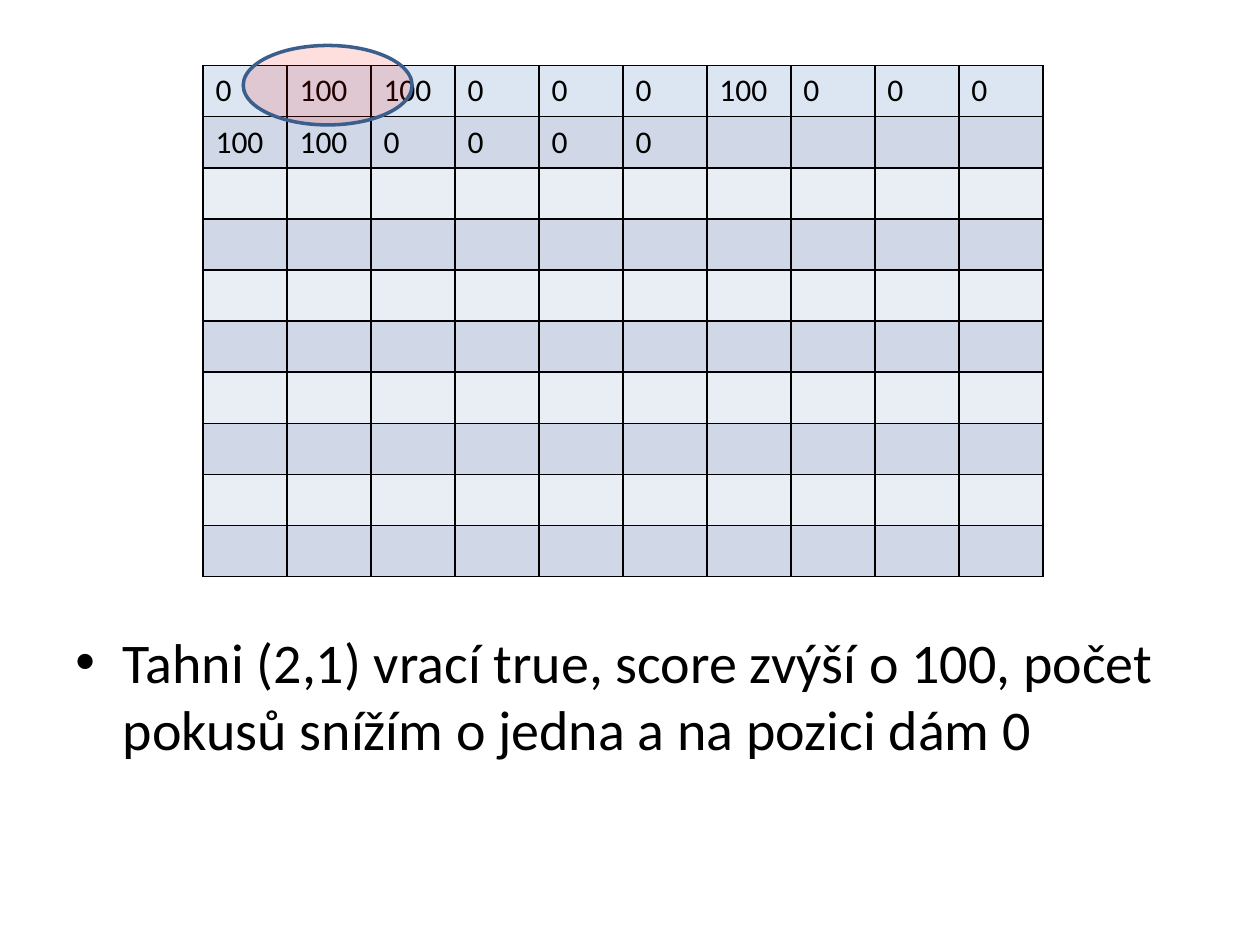
from lxml.etree import SubElement
from pptx import Presentation
from pptx.dml.color import RGBColor
from pptx.enum.shapes import MSO_SHAPE
from pptx.oxml.ns import qn
from pptx.util import Pt

# Content
ROWS = [
    ["0", "100", "100", "0", "0", "0", "100", "0", "0", "0"],
    ["100", "100", "0", "0", "0", "0"],
]
NOTE = ("Tahni (2,1) vrací true, score zvýší o 100, "
        "počet pokusů snížím o jedna a na pozici dám 0")
COLORS = {"text": "000000", "border": "000000", "top": "DCE6F2",
          "odd": "D0D8E8", "even": "E9EDF4",
          "mark": "FF0000", "mark_line": "3A5F8C"}
SIZE = 10
LEFT, TOP, CELL_W, CELL_H = 116, 37.5, 48, 29.2


def rgb(name):
    return RGBColor.from_string(COLORS[name])


def set_font(p, size):
    p.font.name = "Calibri"
    p.font.size = Pt(size)
    p.font.color.rgb = rgb("text")


def add_borders(cell):
    tcPr = cell._tc.get_or_add_tcPr()
    for i, side in enumerate(("lnL", "lnR", "lnT", "lnB")):
        ln = tcPr.makeelement(qn(f"a:{side}"), {"w": str(Pt(1))})
        fill = SubElement(ln, qn("a:solidFill"))
        SubElement(fill, qn("a:srgbClr"), val=COLORS["border"])
        tcPr.insert(i, ln)


prs = Presentation()
prs.slide_width, prs.slide_height = Pt(720), Pt(540)
s = prs.slides.add_slide(prs.slide_layouts[6])

# Game board
table = s.shapes.add_table(SIZE, SIZE, Pt(LEFT), Pt(TOP),
                           Pt(SIZE * CELL_W), Pt(SIZE * CELL_H)).table
for col in table.columns:
    col.width = Pt(CELL_W)
for r, row in enumerate(table.rows):
    row.height = Pt(CELL_H)
    values = ROWS[r] if r < len(ROWS) else []
    shade = "top" if r == 0 else "odd" if r % 2 else "even"
    for c, cell in enumerate(row.cells):
        cell.fill.solid()
        cell.fill.fore_color.rgb = rgb(shade)
        add_borders(cell)
        if c < len(values):
            cell.text = values[c]
        set_font(cell.text_frame.paragraphs[0], 18)

# Explanation bullet
tf = s.shapes.add_textbox(Pt(36), Pt(355), Pt(648), Pt(127.5)).text_frame
tf.word_wrap = True
p = tf.paragraphs[0]
p.text = NOTE
set_font(p, 32)
pPr = p._p.get_or_add_pPr()
pPr.set("marL", str(Pt(27)))
pPr.set("indent", str(-Pt(27)))
bullet_font = pPr.makeelement(qn("a:buFont"), {"typeface": "Arial"})
bullet = pPr.makeelement(qn("a:buChar"), {"char": "•"})
pPr.insert(0, bullet_font)
pPr.insert(1, bullet)

# Translucent mark around the chosen cell
mark = s.shapes.add_shape(MSO_SHAPE.OVAL, Pt(139), Pt(26), Pt(96.5), Pt(45.4))
mark.shadow.inherit = False
mark.fill.solid()
mark.fill.fore_color.rgb = rgb("mark")
color = mark._element.spPr.find(qn("a:solidFill"))[0]
SubElement(color, qn("a:alpha"), val="13000")
mark.line.color.rgb = rgb("mark_line")
mark.line.width = Pt(2)

prs.save("out.pptx")
